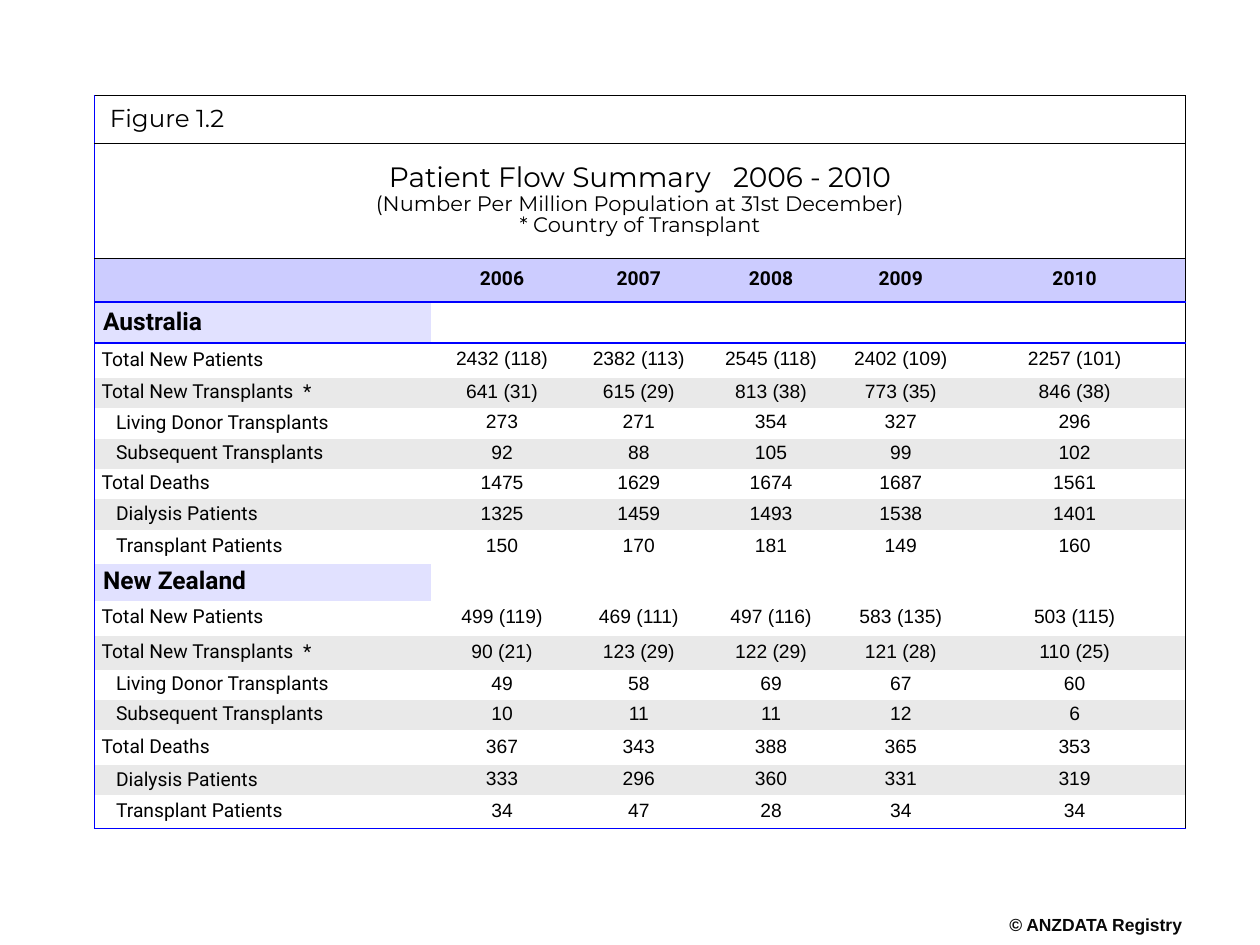
from lxml import etree
from pptx import Presentation
from pptx.dml.color import RGBColor
from pptx.enum import text as t
from pptx.oxml import ns
from pptx.util import Pt

BLUE, BLACK = ("0000FF", 1), ("000000", 0.5)
HEADER_FILL, COUNTRY_FILL, STRIPE_FILL = "CCCCFF", "E1E1FF", "E9E9E9"
NO_STYLE = "{2D5ABB26-0587-4C30-8999-92F81FD0307C}"

COLUMN_WIDTHS = [192.2, 81.4, 74.9, 76.3, 72, 126.7]
ROW_HEIGHTS = [27.4, 65.4, 25.2, 23.4, 19.8] + [17.4] * 5 + [
    19.4, 21.1, 20, 19.4, 17.4, 17.4, 20, 17.2, 18.8]

YEARS = ["2006", "2007", "2008", "2009", "2010"]
MEASURES = [
    ("Total New Patients", 2.7),
    ("Total New Transplants~*", 2.7),
    ("Living Donor Transplants", 10.9),
    ("Subsequent Transplants", 10.9),
    ("Total Deaths", 2.7),
    ("Dialysis Patients", 10.9),
    ("Transplant Patients", 10.9),
]
COUNTRIES = {
    "Australia": [
        ["2432 (118)", "2382 (113)", "2545 (118)", "2402 (109)", "2257 (101)"],
        ["641 (31)", "615 (29)", "813 (38)", "773 (35)", "846 (38)"],
        [273, 271, 354, 327, 296],
        [92, 88, 105, 99, 102],
        [1475, 1629, 1674, 1687, 1561],
        [1325, 1459, 1493, 1538, 1401],
        [150, 170, 181, 149, 160],
    ],
    "New Zealand": [
        ["499 (119)", "469 (111)", "497 (116)", "583 (135)", "503 (115)"],
        ["90 (21)", "123 (29)", "122 (29)", "121 (28)", "110 (25)"],
        [49, 58, 69, 67, 60],
        [10, 11, 11, 12, 6],
        [367, 343, 388, 365, 353],
        [333, 296, 360, 331, 319],
        [34, 47, 28, 34, 34],
    ],
}


def color(value):
    """Turn a hex string into a colour."""
    return RGBColor.from_string(value)


def write(paragraph, content, font="Roboto", size=11, bold=False, ink="000000",
          center=False, indent=0, after=0, gap=2.7):
    """Fill a paragraph; a tilde stands for a space widened by gap points."""
    paragraph.alignment = t.PP_ALIGN.CENTER if center else t.PP_ALIGN.LEFT
    paragraph.line_spacing = 0.85
    paragraph.space_after = Pt(after)
    properties = paragraph._p.get_or_add_pPr()
    properties.set("marL", str(Pt(indent)))
    properties.set("indent", "0")
    for index, part in enumerate(content.replace("~", "~ ~").split("~")):
        run = paragraph.add_run()
        run.text = part
        run.font.name, run.font.size, run.font.bold = font, Pt(size), bold
        run.font.color.rgb = color(ink)
        if index == 1:
            run.font._element.set("spc", str(round(gap * 100)))


class FlowSlide:
    """Hold the slide, its table and their style."""

    def __init__(self, presentation):
        """Add a blank slide."""
        self.slide = presentation.slides.add_slide(presentation.slide_layouts[6])

    def add_table(self, left, top):
        """Add the plain, bordered table grid."""
        frame = self.slide.shapes.add_table(
            len(ROW_HEIGHTS), len(COLUMN_WIDTHS), Pt(left), Pt(top),
            Pt(sum(COLUMN_WIDTHS)), Pt(sum(ROW_HEIGHTS)))
        self.table = frame.table
        self.table.first_row = self.table.horz_banding = False
        self.table._tbl.tblPr.find(ns.qn("a:tableStyleId")).text = NO_STYLE
        for column, width in zip(self.table.columns, COLUMN_WIDTHS):
            column.width = Pt(width)
        for row, height in zip(self.table.rows, ROW_HEIGHTS):
            row.height = Pt(height)
        for row in range(len(ROW_HEIGHTS)):
            for column in range(len(COLUMN_WIDTHS)):
                self.prepare_cell(row, column)
        for row in (0, 1):
            self.table.cell(row, 0).merge(self.table.cell(row, len(YEARS)))

    def prepare_cell(self, row, column):
        """Set the insets, the empty text size and the borders of a cell."""
        cell = self.table.cell(row, column)
        cell.margin_left = cell.margin_right = Pt(1.4)
        cell.margin_top = cell.margin_bottom = Pt(1.4)
        cell.vertical_anchor = t.MSO_ANCHOR.MIDDLE
        paragraph = cell.text_frame.paragraphs[0]._p
        etree.SubElement(paragraph, ns.qn("a:endParaRPr"), sz="1100")
        if column == 0:
            self.border(cell, "L", BLUE)
        if column == len(YEARS) or (row < 2 and column == 0):
            self.border(cell, "R", BLACK)
        if row < 3:
            self.border(cell, "T", BLACK)
        if row == 3:
            self.border(cell, "T", BLUE)
        if row < 2:
            self.border(cell, "B", BLACK)
        elif row in (2, len(ROW_HEIGHTS) - 1):
            self.border(cell, "B", BLUE)

    def border(self, cell, side, line):
        """Draw one side of a cell."""
        ink, width = line
        edge = etree.SubElement(cell._tc.get_or_add_tcPr(),
                                ns.qn(f"a:ln{side}"), w=str(Pt(width)))
        fill = etree.SubElement(edge, ns.qn("a:solidFill"))
        etree.SubElement(fill, ns.qn("a:srgbClr"), val=ink)

    def fill_cell(self, row, column, content="", fill=None, **style):
        """Write and colour one cell."""
        cell = self.table.cell(row, column)
        if fill:
            cell.fill.solid()
            cell.fill.fore_color.rgb = color(fill)
        if content:
            write(cell.text_frame.paragraphs[0], content, **style)
        return cell

    def add_headings(self):
        """Write the figure number, the heading lines and the years."""
        self.fill_cell(0, 0, "Figure 1.2", font="Montserrat", size=14, indent=7.4)
        heading = self.fill_cell(1, 0, "Patient Flow Summary~2006 - 2010",
                                 font="Montserrat", size=16, center=True, gap=8.4)
        for line in ("(Number Per Million Population at 31st December)",
                     "* Country of Transplant"):
            write(heading.text_frame.add_paragraph(), line,
                  font="Montserrat", size=12, center=True)
        for column, year in enumerate([""] + YEARS):
            self.fill_cell(2, column, year, HEADER_FILL, bold=True, center=True)

    def add_country(self, top_row, country, counts):
        """Write a country name and its striped rows of counts."""
        self.fill_cell(top_row, 0, country, COUNTRY_FILL,
                       size=14, bold=True, indent=3.5)
        for index, ((measure, indent), values) in enumerate(zip(MEASURES, counts)):
            row = top_row + 1 + index
            fill = STRIPE_FILL if index % 2 else None
            self.fill_cell(row, 0, measure, fill, indent=indent)
            for column, value in enumerate(values, 1):
                self.fill_cell(row, column, str(value), fill,
                               font="Arial", center=True, after=14)

    def add_text(self, content, left, top, width, height, **style):
        """Add an unwrapped text box without insets."""
        box = self.slide.shapes.add_textbox(Pt(left), Pt(top), Pt(width), Pt(height))
        frame = box.text_frame
        frame.word_wrap = False
        frame.auto_size = t.MSO_AUTO_SIZE.SHAPE_TO_FIT_TEXT
        frame.margin_left = frame.margin_right = 0
        frame.margin_top = frame.margin_bottom = 0
        write(frame.paragraphs[0], content, **style)


def main():
    """Build and save the slide."""
    presentation = Presentation()
    presentation.slide_width, presentation.slide_height = Pt(720), Pt(540)
    flow = FlowSlide(presentation)
    flow.add_text("© ANZDATA Registry", 575.3, 524.2, 101.5, 12.2,
                  font="Arial", size=10, bold=True, ink="080808", center=True)
    flow.add_table(54, 54.7)
    flow.add_headings()
    for index, (country, counts) in enumerate(COUNTRIES.items()):
        flow.add_country(3 + index * (len(MEASURES) + 1), country, counts)
    presentation.save("out.pptx")


if __name__ == "__main__":
    main()
